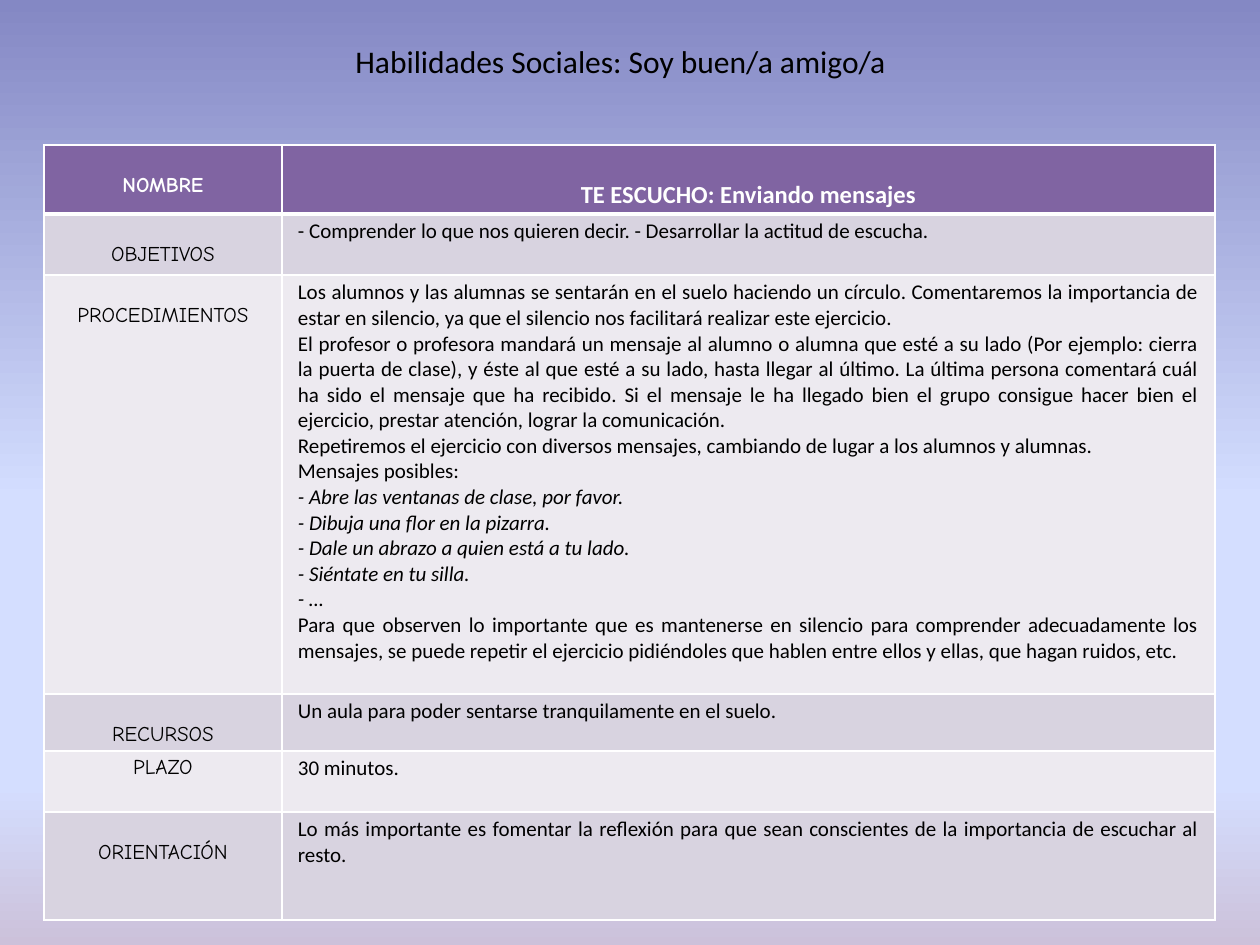
from dataclasses import dataclass

import lxml.etree
import pptx
import pptx.dml.color
import pptx.enum.text
import pptx.oxml.ns
import pptx.util

EMU_PER_PX = 914400 / 126
ALIGN = pptx.enum.text.PP_ALIGN
qn = pptx.oxml.ns.qn

WHITE, BLACK = "FFFFFF", "000000"
HEADER_FILL = "8064A2"
BAND_FILLS = ("EDEAF0", "D8D3E0")
SKY_STOPS = {0: "8488C4", 53: "D4DEFF", 83: "D4DEFF", 100: "CCC1DA"}
LABEL_FONT, BODY_FONT = "Comic Neue", "Calibri"
COLUMN_WIDTHS = (238, 933)
MARGIN_X, MARGIN_Y = 16, 5
LOWERED = 29  # top margin of labels that sit one line down


@dataclass
class Row:
    label: str
    paragraphs: tuple[str, ...]
    height: int
    label_top: int = LOWERED


ROWS = (
    Row("NOMBRE", ("TE ESCUCHO: Enviando mensajes",), 69),
    Row("OBJETIVOS", (
        "- Comprender lo que nos quieren decir. - Desarrollar la actitud de escucha.",
    ), 61),
    Row("PROCEDIMIENTOS", (
        "Los alumnos y las alumnas se sentarán en el suelo haciendo un círculo. "
        "Comentaremos la importancia de estar en silencio, ya que el silencio nos "
        "facilitará realizar este ejercicio.",
        "El profesor o profesora mandará un mensaje al alumno o alumna que esté a su "
        "lado (Por ejemplo: cierra la puerta de clase), y éste al que esté a su lado, "
        "hasta llegar al último. La última persona comentará cuál ha sido el mensaje "
        "que ha recibido. Si el mensaje le ha llegado bien el grupo consigue hacer "
        "bien el ejercicio, prestar atención, lograr la comunicación.",
        "Repetiremos el ejercicio con diversos mensajes, cambiando de lugar a los "
        "alumnos y alumnas.",
        "Mensajes posibles:",
        "- Abre las ventanas de clase, por favor.",
        "- Dibuja una flor en la pizarra.",
        "- Dale un abrazo a quien está a tu lado.",
        "- Siéntate en tu silla.",
        "- …",
        "Para que observen lo importante que es mantenerse en silencio para comprender "
        "adecuadamente los mensajes, se puede repetir el ejercicio pidiéndoles que "
        "hablen entre ellos y ellas, que hagan ruidos, etc.",
    ), 419),
    Row("RECURSOS", ("Un aula para poder sentarse tranquilamente en el suelo.",), 57),
    Row("PLAZO", ("30 minutos.",), 61, MARGIN_Y),
    Row("ORIENTACIÓN", (
        "Lo más importante es fomentar la reflexión para que sean conscientes de la "
        "importancia de escuchar al resto.",
    ), 108),
)


def px(length: int) -> int:
    return round(length * EMU_PER_PX)


def rgb(color: str) -> pptx.dml.color.RGBColor:
    return pptx.dml.color.RGBColor.from_string(color)


def set_font(font, color: str, **values) -> None:
    for name, value in values.items():
        setattr(font, name, value)
    font.color.rgb = rgb(color)


def paint_background(slide) -> None:
    fill = slide.background.fill
    fill.gradient()
    fill.gradient_angle = 270
    stops = slide.element.find(".//" + qn("a:gsLst"))
    for stop in list(stops):
        stops.remove(stop)
    for percent, color in SKY_STOPS.items():
        stop = lxml.etree.SubElement(stops, qn("a:gs"), pos=str(percent * 1000))
        lxml.etree.SubElement(stop, qn("a:srgbClr"), val=color)


def add_borders(cell, top: int, bottom: int) -> None:
    """Draw white cell edges, with widths in points."""
    properties = cell._tc.get_or_add_tcPr()
    for side, width in {"L": 1, "R": 1, "T": top, "B": bottom}.items():
        edge = lxml.etree.SubElement(
            properties, qn(f"a:ln{side}"), w=str(pptx.util.Pt(width)))
        paint = lxml.etree.SubElement(edge, qn("a:solidFill"))
        lxml.etree.SubElement(paint, qn("a:srgbClr"), val=WHITE)


def fill_cell(cell, paragraphs: tuple[str, ...], top: int, fill: str, alignment,
              color: str, **font_values) -> None:
    margins = {"margin_left": MARGIN_X, "margin_right": MARGIN_X,
               "margin_top": top, "margin_bottom": 3}
    for name, value in margins.items():
        setattr(cell, name, px(value))
    cell.fill.solid()
    cell.fill.fore_color.rgb = rgb(fill)
    cell.text = "\n".join(paragraphs)
    for paragraph in cell.text_frame.paragraphs:
        paragraph.alignment = alignment
        for run in paragraph.runs:
            set_font(run.font, color, italic=run.text.startswith("- ")
                     and len(paragraphs) > 1, **font_values)


def add_activity_table(slide) -> None:
    table = slide.shapes.add_table(
        len(ROWS), len(COLUMN_WIDTHS), px(44), px(145),
        px(sum(COLUMN_WIDTHS)), px(sum(row.height for row in ROWS))).table
    for column, width in zip(table.columns, COLUMN_WIDTHS):
        column.width = px(width)
    for index, row in enumerate(ROWS):
        table.rows[index].height = px(row.height)
        header = index == 0
        fill = HEADER_FILL if header else BAND_FILLS[index % 2]
        color = WHITE if header else BLACK
        label, content = table.cell(index, 0), table.cell(index, 1)
        for cell in (label, content):
            add_borders(cell, 3 if index == 1 else 1, 3 if header else 1)
        fill_cell(label, (row.label,), row.label_top, fill, ALIGN.CENTER, color,
                  name=LABEL_FONT, size=pptx.util.Pt(12), bold=header)
        fill_cell(content, row.paragraphs, 35 if header else MARGIN_Y, fill,
                  ALIGN.CENTER if header else ALIGN.JUSTIFY, color, name=BODY_FONT,
                  size=pptx.util.Pt(14 if header else 12), bold=header)


def add_title(slide) -> None:
    frame = slide.shapes.add_textbox(px(343), px(36), px(605), px(50)).text_frame
    frame.word_wrap = True
    run = frame.paragraphs[0].add_run()
    run.text = "Habilidades Sociales: Soy buen/a amigo/a"
    set_font(run.font, BLACK, name=BODY_FONT, size=pptx.util.Pt(18))


def main() -> None:
    deck = pptx.Presentation()
    deck.slide_width, deck.slide_height = px(1260), px(945)
    slide = deck.slides.add_slide(deck.slide_layouts[6])
    paint_background(slide)
    add_activity_table(slide)
    add_title(slide)
    deck.save("out.pptx")


if __name__ == "__main__":
    main()
